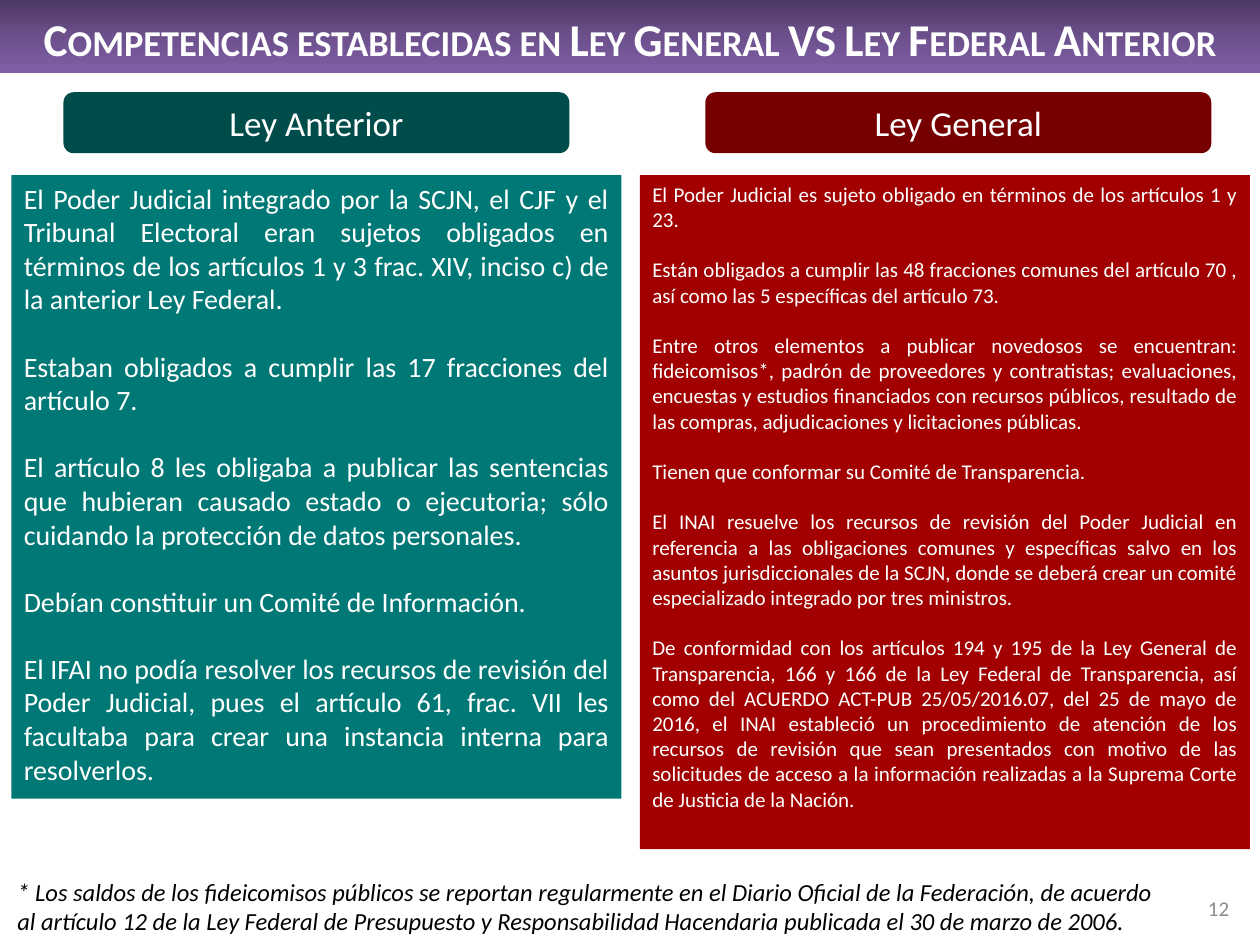
from copy import deepcopy

from lxml.etree import SubElement
from pptx import Presentation
from pptx.dml.color import RGBColor
from pptx.enum.shapes import MSO_SHAPE
from pptx.enum.text import MSO_ANCHOR, MSO_AUTO_SIZE, PP_ALIGN
from pptx.oxml.ns import qn
from pptx.util import Cm, Pt


def color(value):
    return RGBColor.from_string(value)


class SlideBuilder:
    font = "Calibri"
    light = "FFFFFF"

    def __init__(self, slide):
        self.slide = slide

    def place(self, shape, box):
        shape.left, shape.top, shape.width, shape.height = map(Cm, box)

    def set_text(self, shape, paragraphs, size, ink, align, anchor=MSO_ANCHOR.TOP):
        frame = shape.text_frame
        frame.text = "\n".join(paragraphs)
        frame.word_wrap = True
        frame.auto_size = MSO_AUTO_SIZE.NONE
        frame.vertical_anchor = anchor
        for paragraph in frame.paragraphs:
            paragraph.alignment = align
            paragraph.font.name = self.font
            paragraph.font.size = Pt(size)
            paragraph.font.color.rgb = color(ink)
        for paragraph in frame.paragraphs[:-1]:
            paragraph.space_after = Pt(size * 1.2)

    def banner(self, box, stops):
        shape = self.slide.shapes.add_shape(MSO_SHAPE.RECTANGLE, *map(Cm, box))
        shape.shadow.inherit = False
        shape.line.fill.background()
        shape.fill.gradient()
        shape.fill.gradient_angle = 270
        first = next(shape._element.iter(qn("a:gs")))
        first.addnext(deepcopy(first))
        for index, (stop, value) in enumerate(zip(shape.fill.gradient_stops, stops)):
            stop.position = index / (len(stops) - 1)
            stop.color.rgb = color(value)
        self.slide.shapes._spTree.insert(2, shape._element)

    def title(self, text, box):
        shape = self.slide.shapes.title
        self.place(shape, box)
        self.set_text(shape, [text], 26, self.light, PP_ALIGN.CENTER, MSO_ANCHOR.MIDDLE)
        paragraph = shape.text_frame.paragraphs[0]
        paragraph.font.bold = True
        properties = paragraph.runs[0]._r.get_or_add_rPr()
        properties.set("cap", "small")
        effects = SubElement(properties, qn("a:effectLst"))
        shadow = SubElement(effects, qn("a:outerShdw"), blurRad="38100", dist="38100", dir="2700000")
        black = SubElement(shadow, qn("a:srgbClr"), val="000000")
        SubElement(black, qn("a:alpha"), val="43000")

    def panel(self, kind, box, fill, paragraphs, size, align, anchor=MSO_ANCHOR.TOP):
        shape = self.slide.shapes.add_shape(kind, *map(Cm, box))
        shape.shadow.inherit = False
        shape.fill.solid()
        shape.fill.fore_color.rgb = color(fill)
        shape.line.fill.background()
        self.set_text(shape, paragraphs, size, self.light, align, anchor)

    def label(self, text, box, size, ink, align, anchor=MSO_ANCHOR.TOP, italic=False):
        shape = self.slide.shapes.add_textbox(*map(Cm, box))
        self.set_text(shape, [text], size, ink, align, anchor)
        shape.text_frame.paragraphs[0].font.italic = italic


FORMER_LAW = [
    "El Poder Judicial integrado por la SCJN, el CJF y el Tribunal Electoral eran sujetos obligados "
    "en términos de los artículos 1 y 3 frac. XIV, inciso c) de la anterior Ley Federal.",
    "Estaban obligados a cumplir las 17 fracciones del artículo 7.",
    "El artículo 8 les obligaba a publicar las sentencias que hubieran causado estado o ejecutoria; "
    "sólo cuidando la protección de datos personales.",
    "Debían constituir un Comité de Información.",
    "El IFAI no podía resolver los recursos de revisión del Poder Judicial, pues el artículo 61, "
    "frac. VII les facultaba para crear una instancia interna para resolverlos.",
]
GENERAL_LAW = [
    "El Poder Judicial es sujeto obligado en términos de los artículos 1 y 23.",
    "Están obligados a cumplir las 48 fracciones comunes del artículo 70 , así como las 5 "
    "específicas del artículo 73.",
    "Entre otros elementos a publicar novedosos se encuentran: fideicomisos*, padrón de proveedores "
    "y contratistas; evaluaciones, encuestas y estudios financiados con recursos públicos, resultado "
    "de las compras, adjudicaciones y licitaciones públicas.",
    "Tienen que conformar su Comité de Transparencia.",
    "El INAI resuelve los recursos de revisión del Poder Judicial en referencia a las obligaciones "
    "comunes y específicas salvo en los asuntos jurisdiccionales de la SCJN, donde se deberá crear "
    "un comité especializado integrado por tres ministros.",
    "De conformidad con los artículos 194 y 195 de la Ley General de Transparencia, 166 y 166 de la "
    "Ley Federal de Transparencia, así como del ACUERDO ACT-PUB 25/05/2016.07, del 25 de mayo de "
    "2016, el INAI estableció un procedimiento de atención de los recursos de revisión que sean "
    "presentados con motivo de las solicitudes de acceso a la información realizadas a la Suprema "
    "Corte de Justicia de la Nación.",
]
COLUMNS = [
    ("Ley Anterior", 1.28, "004C4A", FORMER_LAW, 0.23, 12.57, "007976", 16),
    ("Ley General", 14.22, "760000", GENERAL_LAW, 12.9, 13.59, "A20000", 12),
]


def main():
    presentation = Presentation()
    presentation.slide_width, presentation.slide_height = Cm(25.4), Cm(19.05)
    slide = presentation.slides.add_slide(presentation.slide_layouts[5])
    builder = SlideBuilder(slide)
    builder.banner((0, 0, 25.4, 1.47), ("4C3863", "6C508C", "805FA7"))
    builder.title("Competencias establecidas en Ley General VS Ley Federal Anterior", (0, 0.08, 25.4, 1.37))
    for heading, heading_left, dark, paragraphs, left, height, fill, size in COLUMNS:
        builder.panel(MSO_SHAPE.ROUNDED_RECTANGLE, (heading_left, 1.86, 10.2, 1.23), dark,
                      [heading], 20, PP_ALIGN.CENTER, MSO_ANCHOR.MIDDLE)
        builder.panel(MSO_SHAPE.RECTANGLE, (left, 3.53, 12.3, height), fill,
                      paragraphs, size, PP_ALIGN.JUSTIFY)
    builder.label(
        "* Los saldos de los fideicomisos públicos se reportan regularmente en el Diario Oficial de la "
        "Federación, de acuerdo al artículo 12 de la Ley Federal de Presupuesto y Responsabilidad "
        "Hacendaria publicada el 30 de marzo de 2006.",
        (0.1, 17.55, 23.4, 1.45), 14, "000000", PP_ALIGN.JUSTIFY, italic=True)
    builder.label("12", (22.9, 17.8, 2.13, 1.02), 12, "8C8C8C", PP_ALIGN.RIGHT, MSO_ANCHOR.MIDDLE)
    presentation.save("out.pptx")


if __name__ == "__main__":
    main()
